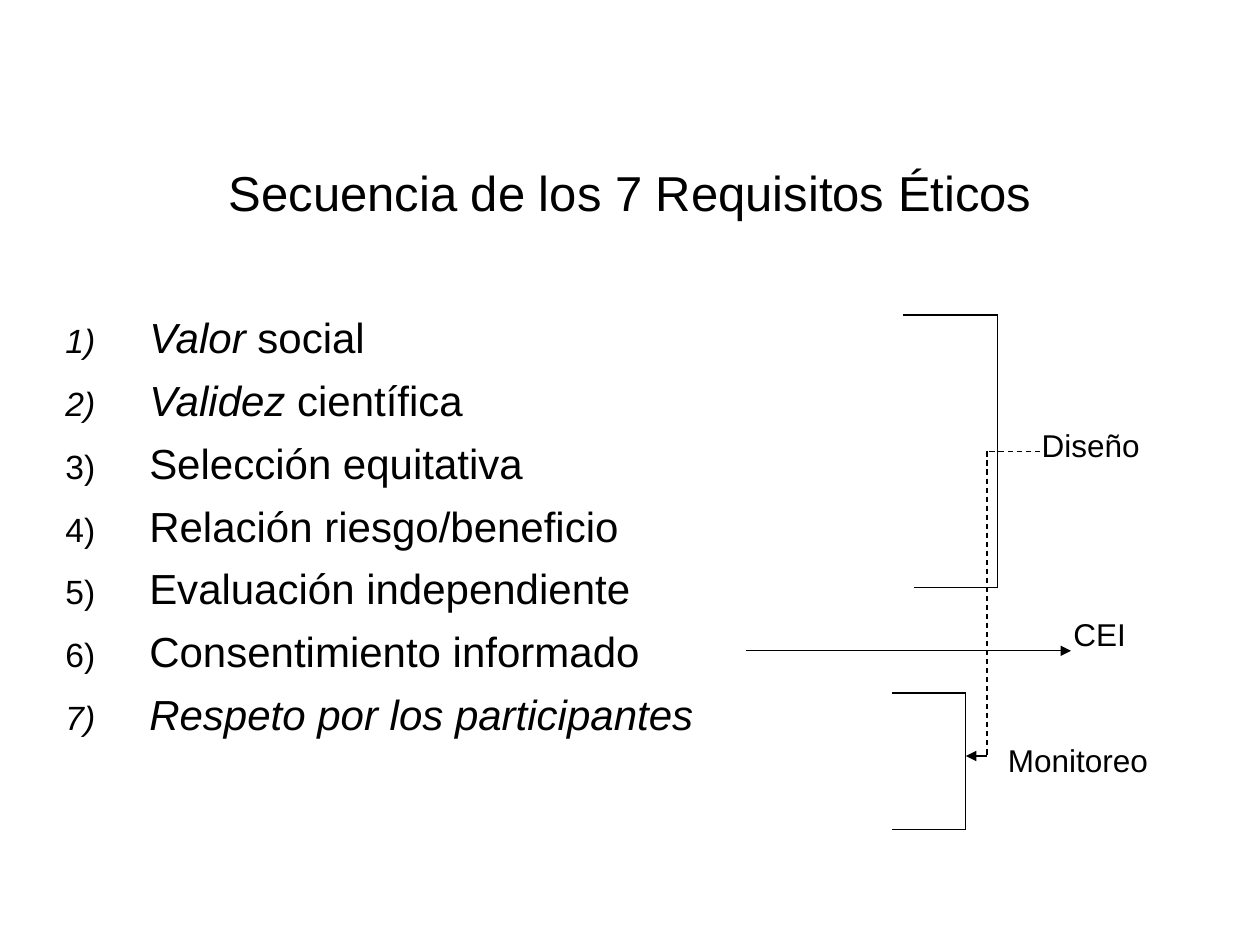
from itertools import pairwise

from lxml.etree import SubElement
from pptx import Presentation
from pptx.dml.color import RGBColor
from pptx.enum.dml import MSO_LINE
from pptx.enum.shapes import MSO_CONNECTOR
from pptx.enum.text import MSO_ANCHOR, MSO_AUTO_SIZE, PP_ALIGN
from pptx.oxml.ns import qn
from pptx.util import Cm, Pt

COLORS = {"ink": "000000", "background": "FFFFFF"}
FONT = "Arial"

TITLE = "Secuencia de los 7 Requisitos Éticos"
REQUIREMENTS = [
    [("Valor ", True), ("social", False)],
    [("Validez ", True), ("científica", False)],
    [("Selección equitativa", False)],
    [("Relación riesgo/beneficio", False)],
    [("Evaluación independiente", False)],
    [("Consentimiento informado", False)],
    [("Respeto por los participantes", True)],
]
STAGES = [
    ("Diseño", (20.75, 8.47, 3.39, 1.27)),
    ("CEI", (21.39, 12.28, 1.93, 1.27)),
    ("Monitoreo", (20.07, 14.82, 4.29, 1.27)),
]
PATHS = [
    {"points": [(18.2, 6.35), (20.11, 6.35), (20.11, 11.85), (18.42, 11.85)]},
    {"points": [(15.03, 13.12), (21.59, 13.12)], "arrow": True},
    {"points": [(17.99, 13.97), (19.47, 13.97), (19.47, 16.72), (17.99, 16.72)]},
    {"points": [(20.96, 9.1), (19.9, 9.1), (19.9, 15.24)], "dashed": True},
    {"points": [(19.9, 15.24), (19.47, 15.24)], "arrow": True},
]


def number_paragraph(paragraph, indent=1.69):
    properties = paragraph._p.get_or_add_pPr()
    properties.set("marL", str(Cm(indent)))
    properties.set("indent", str(-Cm(indent)))
    SubElement(properties, qn("a:buSzPct"), val="80000")
    SubElement(properties, qn("a:buFont"), typeface=FONT)
    SubElement(properties, qn("a:buAutoNum"), type="arabicParenR")


def add_text(slide, paragraphs, box, size=18, align=PP_ALIGN.LEFT,
             anchor=MSO_ANCHOR.TOP, wrap=True, numbered=False):
    shape = slide.shapes.add_textbox(*map(Cm, box))
    frame = shape.text_frame
    frame.word_wrap = wrap
    frame.auto_size = MSO_AUTO_SIZE.NONE if wrap else MSO_AUTO_SIZE.SHAPE_TO_FIT_TEXT
    frame.vertical_anchor = anchor
    for index, runs in enumerate(paragraphs):
        paragraph = frame.add_paragraph() if index else frame.paragraphs[0]
        paragraph.alignment = align
        if numbered:
            number_paragraph(paragraph)
            paragraph.line_spacing = 0.8
            paragraph.space_after = Pt(12.9)
        for text, italic in runs:
            run = paragraph.add_run()
            run.text = text
            run.font.name = FONT
            run.font.size = Pt(size)
            run.font.italic = italic
            run.font.color.rgb = RGBColor.from_string(COLORS["ink"])


def add_path(slide, points, arrow=False, dashed=False):
    for start, end in pairwise(points):
        connector = slide.shapes.add_connector(
            MSO_CONNECTOR.STRAIGHT, *map(Cm, start + end))
        connector.line.color.rgb = RGBColor.from_string(COLORS["ink"])
        connector.line.width = Pt(0.75)
        if dashed:
            connector.line.dash_style = MSO_LINE.DASH
        if arrow:
            SubElement(connector.line._get_or_add_ln(), qn("a:tailEnd"), type="triangle")
        SubElement(connector._element.spPr, qn("a:effectLst"))


def main():
    presentation = Presentation()
    presentation.slide_width, presentation.slide_height = Cm(25.4), Cm(19.05)
    slide = presentation.slides.add_slide(presentation.slide_layouts[6])
    slide.background.fill.solid()
    slide.background.fill.fore_color.rgb = RGBColor.from_string(COLORS["background"])

    add_text(slide, [[(TITLE, False)]], (0, 2.97, 25.4, 1.8), size=28,
             align=PP_ALIGN.CENTER, anchor=MSO_ANCHOR.MIDDLE)
    add_text(slide, REQUIREMENTS, (1.07, 6.35, 17.58, 11.63), size=24, numbered=True)
    for label, box in STAGES:
        add_text(slide, [[(label, False)]], box, wrap=False)
    for path in PATHS:
        add_path(slide, **path)
    presentation.save("out.pptx")


if __name__ == "__main__":
    main()
